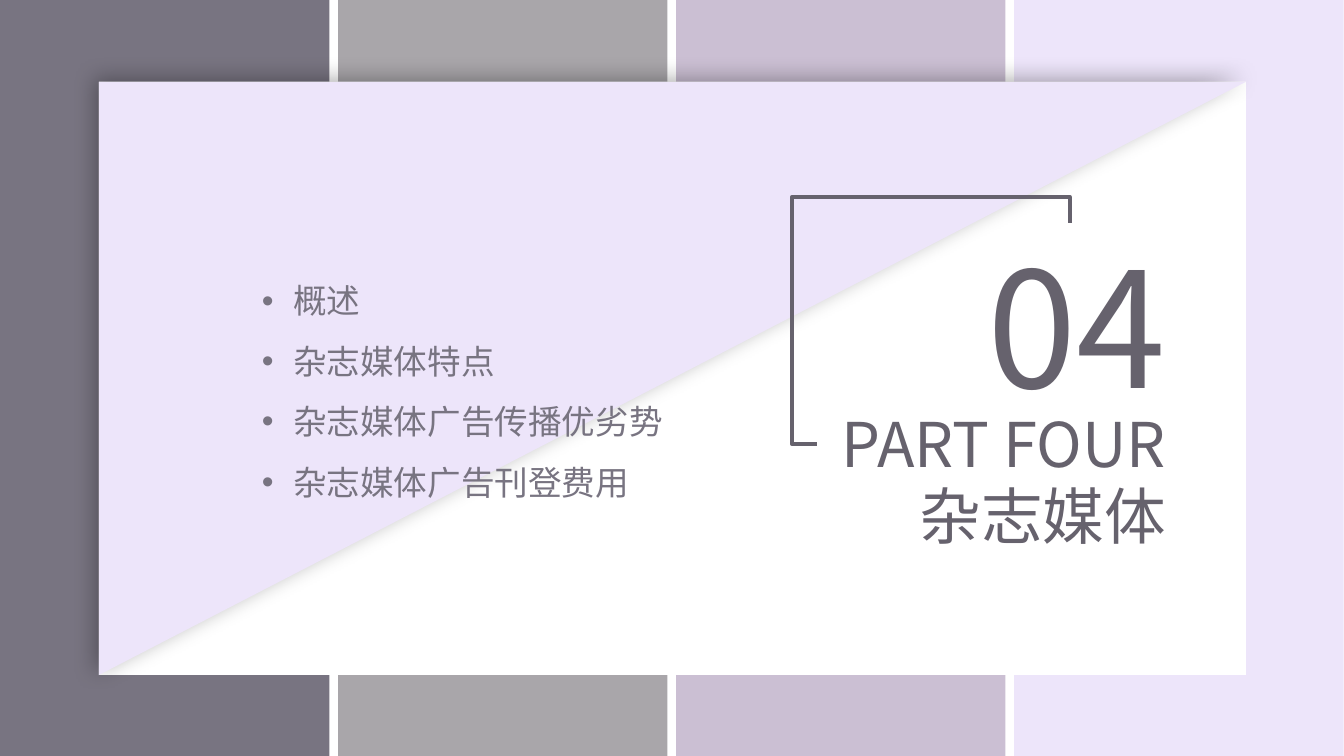
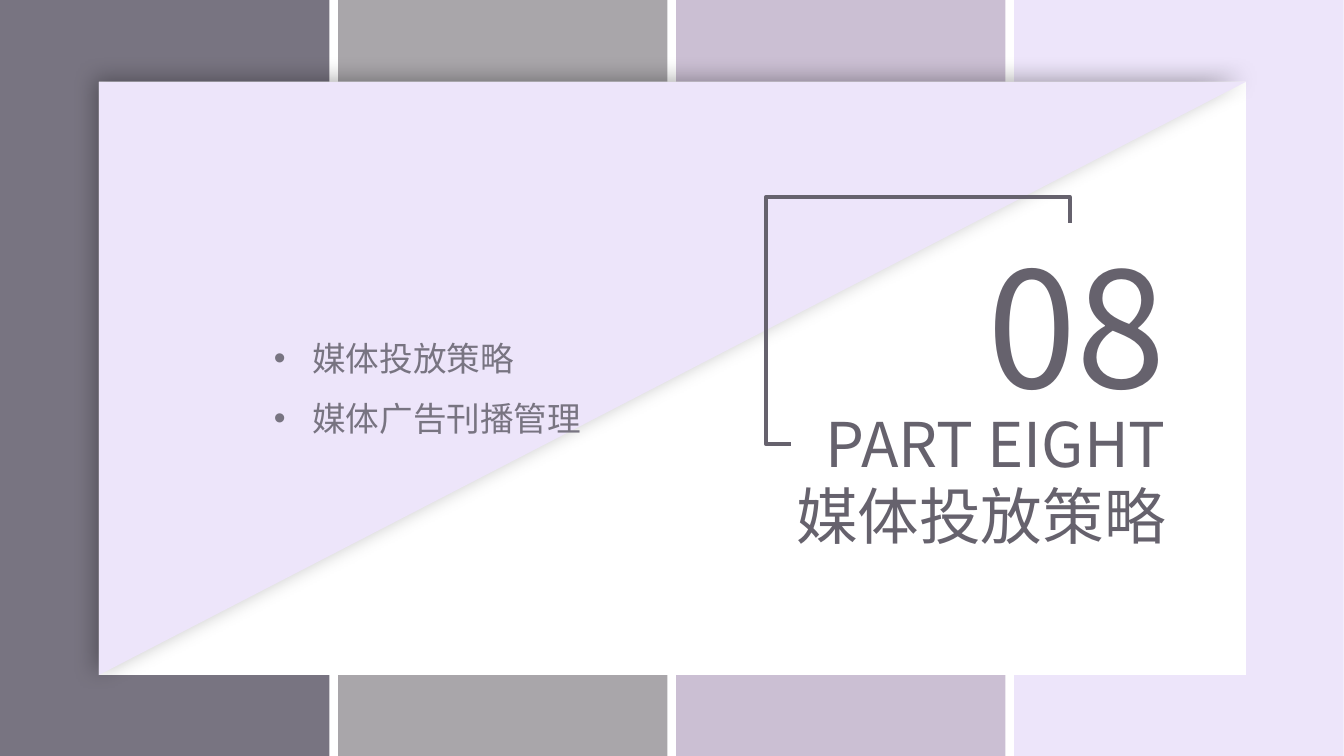
from lxml.etree import SubElement
from pptx import Presentation
from pptx.dml.color import RGBColor
from pptx.enum.shapes import MSO_CONNECTOR as Connector, MSO_SHAPE as Shape
from pptx.enum.text import MSO_ANCHOR as Anchor, MSO_AUTO_SIZE as AutoSize, PP_ALIGN as Align
from pptx.oxml.ns import qn
from pptx.util import Cm, Pt

FONT = "Noto Sans CJK SC"
INK, SLATE, GREY, MAUVE, LILAC, WHITE = "66626D", "787481", "A9A6AA", "CBBFD3", "EDE5FA", "FFFFFF"
PANEL = (2.49, 2.06, 28.91, 14.95)
TEXT_RIGHT = 29.64
BAND_WIDTH, BAND_PITCH = 8.3, 8.52
BRACKET_REACH = 0.64


def color(value):
    return RGBColor.from_string(value)


class ChapterDeck:
    def __init__(self):
        self.deck = Presentation()
        self.deck.slide_width, self.deck.slide_height = Cm(33.87), Cm(19.05)
        self.layout = self.deck.slide_layouts[5]
        self.slide = None

    def new_slide(self):
        self.slide = self.deck.slides.add_slide(self.layout)
        if len(self.deck.slides) == 1:
            self.shared_bands()

    def shared_bands(self):
        for index, fill in enumerate((SLATE, GREY, MAUVE, LILAC)):
            band = self.block(Shape.RECTANGLE, (index * BAND_PITCH, 0, BAND_WIDTH, 19.05), fill)
            self.layout.shapes.element.insert(2 + index, band.element)

    def block(self, kind, box, fill):
        block = self.slide.shapes.add_shape(kind, *map(Cm, box))
        block.shadow.inherit = False
        block.fill.solid()
        block.fill.fore_color.rgb = color(fill)
        block.line.fill.background()
        return block

    def panel(self):
        self.block(Shape.RECTANGLE, PANEL, WHITE)
        corner = self.block(Shape.ISOSCELES_TRIANGLE, PANEL, LILAC)
        corner.adjustments[0] = 1
        corner.rotation = 180
        effects = corner.element.spPr.find(qn("a:effectLst"))
        shadow = SubElement(effects, qn("a:outerShdw"), blurRad=str(Pt(15)), dist=str(Pt(3)),
                            dir="13500000", algn="br", rotWithShape="0")
        black = SubElement(shadow, qn("a:srgbClr"), val="000000")
        SubElement(black, qn("a:alpha"), val="30000")

    def set_text(self, holder, box, lines, size, ink=INK, align=Align.RIGHT, spacing=1.0):
        holder.left, holder.top, holder.width, holder.height = map(Cm, box)
        frame = holder.text_frame
        frame.text = "\n".join(lines)
        frame.word_wrap = True
        frame.auto_size = AutoSize.SHAPE_TO_FIT_TEXT
        frame.vertical_anchor = Anchor.TOP
        for paragraph in frame.paragraphs:
            paragraph.alignment = align
            paragraph.line_spacing = spacing
            for run in paragraph.runs:
                run.font.size = Pt(size)
                run.font.name = FONT
                run.font.color.rgb = color(ink)
        for latin in list(holder.element.iter(qn("a:latin"))):
            latin.addnext(latin.makeelement(qn("a:ea"), typeface=FONT))

    def label(self, box, lines, size, **style):
        holder = self.slide.shapes.add_textbox(*map(Cm, box))
        self.set_text(holder, box, lines, size, **style)
        return holder

    def title(self, text):
        title = self.slide.shapes.title
        self.slide.shapes.element.append(title.element)
        self.set_text(title, (TEXT_RIGHT - 12.1, 11.91, 12.1, 2.13), [text], 44)

    def bracket(self, start, end):
        (x1, y1), (x2, y2) = start, end
        across, down = x1 - x2, y2 - y1
        mid_x, mid_y = (x1 + x2) / 2, (y1 + y2) / 2
        bracket = self.slide.shapes.add_connector(
            Connector.ELBOW, Cm(mid_x + down / 2), Cm(mid_y + across / 2),
            Cm(mid_x - down / 2), Cm(mid_y - across / 2))
        bracket.line.color.rgb = color(INK)
        bracket.line.width = Pt(3)
        properties = bracket.element.spPr
        properties.find(qn("a:xfrm")).set("rot", "16200000")
        geometry = properties.find(qn("a:prstGeom"))
        geometry.set("prst", "bentConnector4")
        guides = geometry.find(qn("a:avLst"))
        bends = (-BRACKET_REACH / down, 1 + BRACKET_REACH / across)
        for number, bend in enumerate(bends, 1):
            SubElement(guides, qn("a:gd"), name=f"adj{number}", fmla=f"val {round(bend * 100000)}")
        SubElement(properties, qn("a:effectLst"))

    def bullets(self, box, topics, indent):
        topic_list = self.label(box, topics, 24, ink=SLATE, align=Align.LEFT, spacing=1.5)
        for properties in topic_list.element.iter(qn("a:pPr")):
            properties.set("marL", str(Cm(indent)))
            properties.set("indent", str(-Cm(indent)))
            SubElement(properties, qn("a:buFont"), typeface="Arial")
            SubElement(properties, qn("a:buChar"), char="•")

    def chapter(self, number, part, part_width, name, topics, topics_box, indent):
        part_left = TEXT_RIGHT - part_width
        self.new_slide()
        self.panel()
        self.label((TEXT_RIGHT - 5.36, 5.61, 5.36, 5.18), [number], 115)
        self.label((part_left, 10.11, part_width, 2.13), [part], 44)
        self.title(name)
        self.bracket((TEXT_RIGHT - 5.36 / 2, 5.61), (part_left, 11.18))
        self.bullets(topics_box, topics, indent)


def main():
    chapters = ChapterDeck()
    chapters.chapter("04", "PART FOUR", 9.04, "杂志媒体",
                     ["概述", "杂志媒体特点", "杂志媒体广告传播优劣势", "杂志媒体广告刊登费用"],
                     (6.35, 6.43, 16.94, 6.17), 0.79)
    chapters.chapter("08", "PART EIGHT", 9.7, "媒体投放策略",
                     ["媒体投放策略", "媒体广告刊播管理"],
                     (6.65, 7.87, 16.94, 3.33), 0.97)
    chapters.deck.save("out.pptx")


if __name__ == "__main__":
    main()
